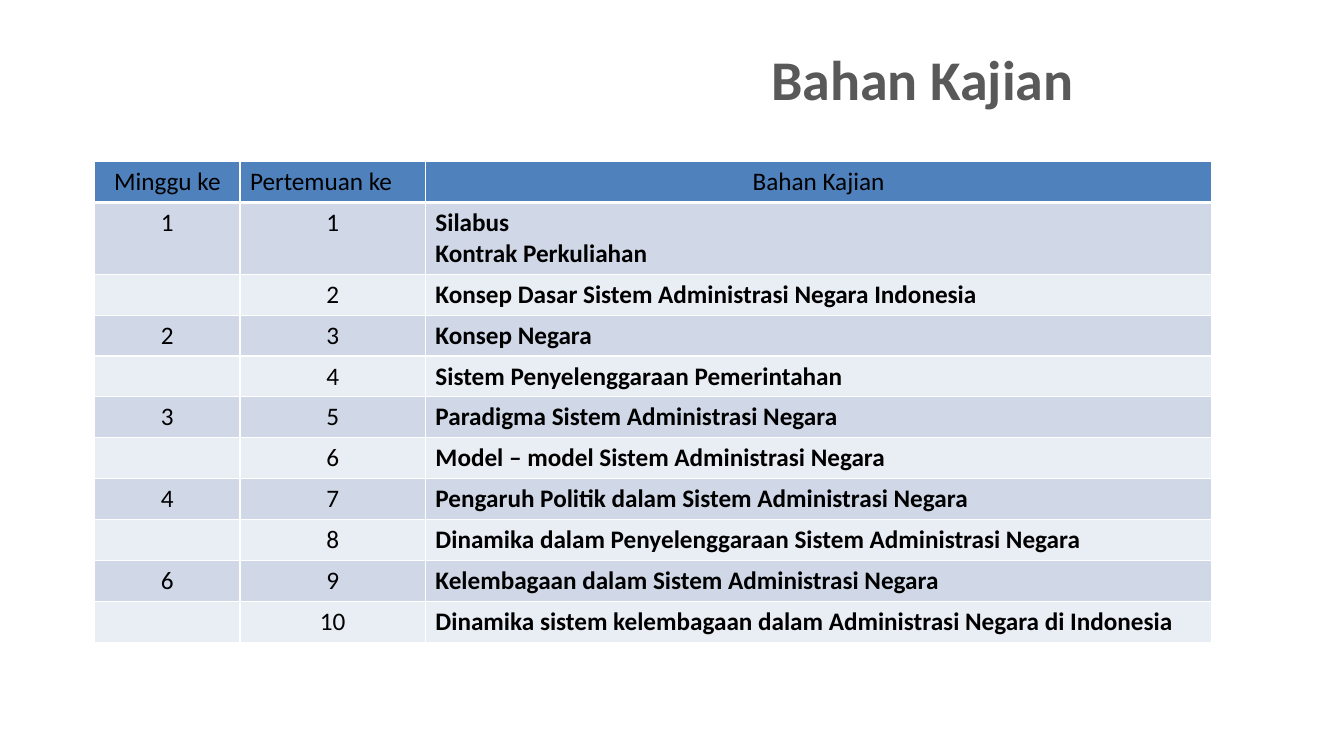
import pptx
import pptx.dml.color
import pptx.enum.text
import pptx.util
from lxml import etree
from pptx.oxml.ns import qn

Pt = pptx.util.Pt
RGBColor = pptx.dml.color.RGBColor
ALIGN = pptx.enum.text.PP_ALIGN

# Content
TITLE = "Bahan Kajian"
HEADER = ("Minggu ke", "Pertemuan ke", "Bahan Kajian")
WEEKS = (1, 2, 3, 4, 6)  # each week holds two meetings
TOPICS = [
    "Silabus\nKontrak Perkuliahan",
    "Konsep Dasar Sistem Administrasi Negara Indonesia",
    "Konsep Negara",
    "Sistem Penyelenggaraan Pemerintahan",
    "Paradigma Sistem Administrasi Negara",
    "Model – model Sistem Administrasi Negara",
    "Pengaruh Politik dalam Sistem Administrasi Negara",
    "Dinamika dalam Penyelenggaraan Sistem Administrasi Negara",
    "Kelembagaan dalam Sistem Administrasi Negara",
    "Dinamika sistem kelembagaan dalam Administrasi Negara di Indonesia",
]

# Theme and layout
THEME = {
    "font": "Calibri", "title_size": 40, "table_size": 18,
    "title": "595959", "text": "000000", "header": "4F81BD",
    "bands": ("D0D8E8", "E9EDF4"), "border": "FFFFFF",
}
TITLE_BOX = (547.2, 26.6, 334.8, 47.5)
TABLE_LEFT, TABLE_TOP = 67.7, 115.5
COLUMN_WIDTHS = (103.7, 132.5, 561.6)
ROW_HEIGHT, LINE_HEIGHT = 29.2, 22
HEADER_ALIGNS = (ALIGN.CENTER, ALIGN.LEFT, ALIGN.CENTER)
BODY_ALIGNS = (ALIGN.CENTER, ALIGN.CENTER, ALIGN.LEFT)


def set_attributes(target, values):
    for name, value in values.items():
        setattr(target, name, value)


def write_text(frame, text, size, color, bold, align):
    frame.text = text
    for paragraph in frame.paragraphs:
        paragraph.alignment = align
        set_attributes(paragraph.font, {"name": THEME["font"], "size": Pt(size), "bold": bold})
        paragraph.font.color.rgb = RGBColor.from_string(color)


def set_borders(cell, widths):
    properties = cell._tc.get_or_add_tcPr()
    for index, (side, width) in enumerate(zip("LRTB", widths)):
        line = etree.Element(qn(f"a:ln{side}"), w=str(Pt(width)))
        fill = etree.SubElement(line, qn("a:solidFill"))
        etree.SubElement(fill, qn("a:srgbClr"), val=THEME["border"])
        properties.insert(index, line)


presentation = pptx.Presentation()
set_attributes(presentation, {"slide_width": Pt(960), "slide_height": Pt(540)})
slide = presentation.slides.add_slide(presentation.slide_layouts[6])

# Title
title_frame = slide.shapes.add_textbox(*map(Pt, TITLE_BOX)).text_frame
set_attributes(title_frame, {"word_wrap": True, "margin_left": Pt(3.6), "margin_top": Pt(5)})
write_text(title_frame, TITLE, THEME["title_size"], THEME["title"], True, ALIGN.LEFT)

# Table of meetings
rows = [HEADER]
for index, topic in enumerate(TOPICS):
    week = "" if index % 2 else str(WEEKS[index // 2])
    rows.append((week, str(index + 1), topic))
heights = [ROW_HEIGHT + LINE_HEIGHT * row[2].count("\n") for row in rows]

table = slide.shapes.add_table(
    len(rows), len(HEADER), Pt(TABLE_LEFT), Pt(TABLE_TOP),
    Pt(sum(COLUMN_WIDTHS)), Pt(sum(heights))).table
for column, width in zip(table.columns, COLUMN_WIDTHS):
    column.width = Pt(width)

for row_index, row in enumerate(rows):
    is_header = row_index == 0
    table.rows[row_index].height = Pt(heights[row_index])
    fill_color = THEME["header"] if is_header else THEME["bands"][(row_index - 1) % 2]
    aligns = HEADER_ALIGNS if is_header else BODY_ALIGNS
    for column_index, text in enumerate(row):
        cell = table.cell(row_index, column_index)
        bold = not is_header and column_index == 2
        write_text(cell.text_frame, text, THEME["table_size"], THEME["text"],
                   bold, aligns[column_index])
        set_borders(cell, (1, 1, 3 if row_index == 1 else 1, 3 if is_header else 1))
        cell.fill.solid()
        cell.fill.fore_color.rgb = RGBColor.from_string(fill_color)

presentation.save("out.pptx")
